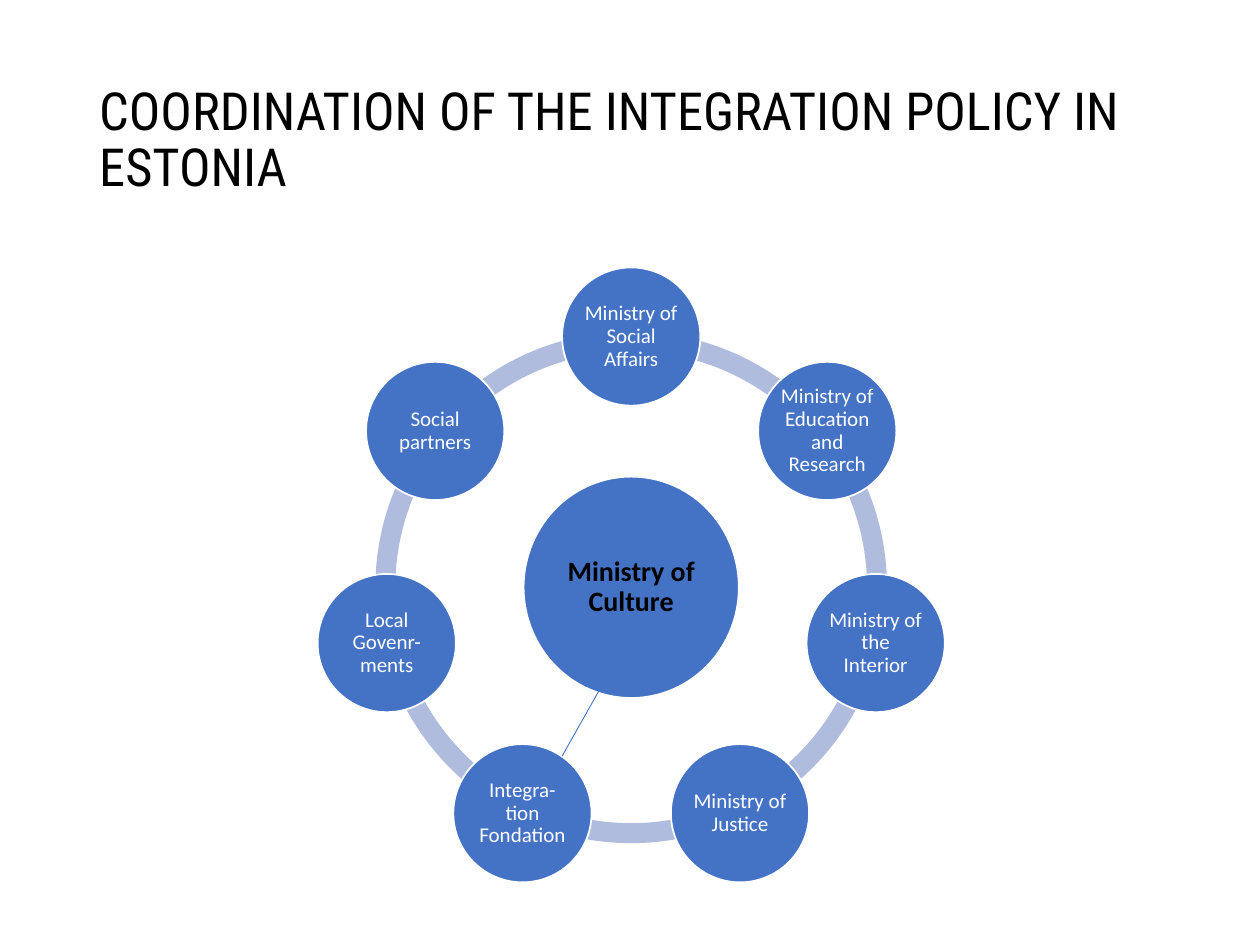
from math import cos, radians, sin

from lxml import etree
from pptx import Presentation
from pptx.dml.color import RGBColor
from pptx.enum.shapes import MSO_CONNECTOR, MSO_SHAPE
from pptx.enum.text import MSO_ANCHOR, PP_ALIGN
from pptx.oxml.ns import qn
from pptx.util import Pt

ARC, OVAL = MSO_SHAPE.BLOCK_ARC, MSO_SHAPE.OVAL
STRAIGHT = MSO_CONNECTOR.STRAIGHT
MIDDLE = MSO_ANCHOR.MIDDLE
LEFT, CENTER = PP_ALIGN.LEFT, PP_ALIGN.CENTER

COLORS = {"blue": "4472C4", "band": "B0BCDE", "white": "FFFFFF", "black": "000000"}
NODES = [
    "Ministry of Social Affairs",
    "Ministry of Education and Research",
    "Ministry of the Interior",
    "Ministry of Justice",
    "Integra-tion Fondation",
    "Local Govenr-ments",
    "Social partners",
]


def color(name):
    """Return the named colour."""
    return RGBColor.from_string(COLORS[name])


def write(shape, text, font, size, ink, align, bold=False):
    """Set one paragraph of text in a shape."""
    frame = shape.text_frame
    frame.word_wrap = True
    frame.vertical_anchor = MIDDLE
    para = frame.paragraphs[0]
    para.alignment = align
    para.line_spacing = 0.9
    run = para.add_run()
    run.text = text
    run.font.name = font
    run.font.size = Pt(size)
    run.font.bold = bold
    run.font.color.rgb = color(ink)


def add_title(slide, box, text):
    """Place the title in its box."""
    title = slide.shapes.title
    title.left, title.top, title.width, title.height = map(Pt, box)
    write(title, text, "Roboto Condensed", 30, "black", LEFT)


def add_arc(slide, box, start, end):
    """Draw one piece of the ring between two angles."""
    arc = slide.shapes.add_shape(ARC, *map(Pt, box))
    arc.shadow.inherit = False
    arc.adjustments[0] = start % 360 * 0.6
    arc.adjustments[1] = end % 360 * 0.6
    arc.adjustments[2] = 0.039
    arc.fill.solid()
    arc.fill.fore_color.rgb = color("band")
    arc.line.fill.background()


def add_disc(slide, mid, size, text, points, ink, bold=False):
    """Draw a labelled disc around its middle point."""
    (x, y), (wide, high) = mid, size
    disc = slide.shapes.add_shape(
        OVAL, Pt(x - wide / 2), Pt(y - high / 2), Pt(wide), Pt(high))
    disc.shadow.inherit = False
    disc.fill.solid()
    disc.fill.fore_color.rgb = color("blue")
    disc.line.color.rgb = color("white")
    disc.line.width = Pt(1)
    frame = disc.text_frame
    frame.margin_left = frame.margin_right = Pt(1.4)
    frame.margin_top = frame.margin_bottom = Pt(1.4)
    write(disc, text, "Calibri", points, ink, CENTER, bold)


def add_link(slide, start, end):
    """Draw a thin line between two points."""
    link = slide.shapes.add_connector(STRAIGHT, *map(Pt, start + end))
    link.line.color.rgb = color("blue")
    link.line.width = Pt(0.5)
    etree.SubElement(link._element.spPr, qn("a:effectLst"))


def add_wheel(slide, box, hub, nodes):
    """Draw a ring of nodes around a hub."""
    left, top, wide, high = box
    x, y = left + wide / 2, top + high / 2
    reach = wide * 0.49
    step = 360 / len(nodes)
    turns = [step * i - 90 for i in range(len(nodes))]
    for turn in reversed(turns):
        add_arc(slide, box, turn, turn + step)
    add_disc(slide, (x, y), (123, 126.5), hub, 16, "black", True)
    for turn, text in zip(turns, nodes):
        angle = radians(turn)
        mid = x + reach * cos(angle), y + reach * sin(angle)
        add_disc(slide, mid, (79, 79), text, 12, "white")
    add_link(slide, (x - 17.5, y + 57.5), (x - 39.5, y + 96.5))


def main():
    """Build and save the slide."""
    deck = Presentation()
    deck.slide_width, deck.slide_height = Pt(720), Pt(540)
    slide = deck.slides.add_slide(deck.slide_layouts[5])
    add_title(slide, (49.5, 28.75, 621, 104.4),
              "COORDINATION OF THE INTEGRATION POLICY IN ESTONIA")
    add_wheel(slide, (214.5, 189.4, 292.4, 292.4), "Ministry of Culture", NODES)
    deck.save("out.pptx")


if __name__ == "__main__":
    main()
